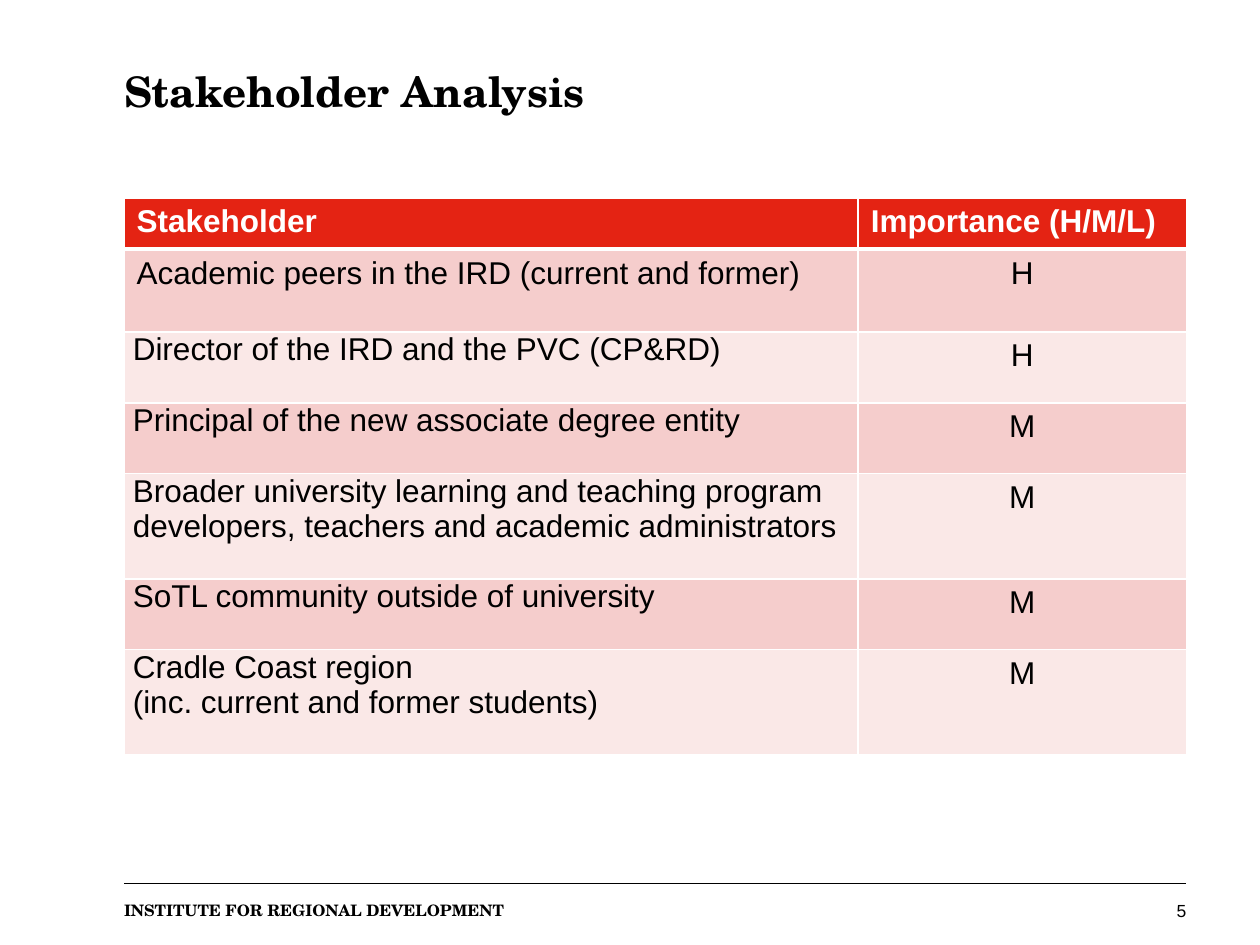
from lxml import etree
from pptx import Presentation
from pptx.dml.color import RGBColor
from pptx.enum import shapes, text
from pptx.oxml import ns
from pptx.util import Pt

COLORS = {"black": "000000", "white": "FFFFFF", "header": "E42313",
          "odd": "F5CDCC", "even": "FAE8E7"}
SERIF, SANS = "TeX Gyre Schola", "Arial"
LEFT, WIDTH = 70.9, 607

STAKEHOLDERS = [
    (["Academic peers in the IRD (current and former)"], "H", 47.4),
    (["Director of the IRD and the PVC (CP&RD)"], "H", 40.4),
    (["Principal of the new associate degree entity"], "M", 40.4),
    (["Broader university learning and teaching program developers, "
      "teachers and academic administrators"], "M", 60.3),
    (["SoTL community outside of university"], "M", 40.4),
    (["Cradle Coast region", "(inc. current and former students)"], "M", 60.3),
]


def rgb(name):
    return RGBColor.from_string(COLORS[name])


def write(frame, lines, size, font, color="black", bold=False, align=text.PP_ALIGN.LEFT):
    for index, line in enumerate(lines):
        paragraph = frame.add_paragraph() if index else frame.paragraphs[0]
        paragraph.alignment = align
        run = paragraph.add_run()
        run.text = line
        run.font.size, run.font.name, run.font.bold = Pt(size), font, bold
        run.font.color.rgb = rgb(color)


def add_label(slide, box, line, size, font, **style):
    frame = slide.shapes.add_textbox(*map(Pt, box)).text_frame
    frame.word_wrap = True
    frame.margin_left = frame.margin_right = frame.margin_top = frame.margin_bottom = 0
    write(frame, [line], size, font, **style)
    return frame


def add_title(slide, box):
    frame = add_label(slide, box, "Stakeholder Analysis", 24, SERIF, bold=True)
    frame.paragraphs[0].line_spacing = Pt(24)


def set_borders(cell, top, bottom):
    """Draw white borders; the side borders are 1 pt wide."""
    properties = cell._tc.get_or_add_tcPr()
    sides = {"lnL": 1, "lnR": 1, "lnT": top, "lnB": bottom}
    for index, (side, width) in enumerate(sides.items()):
        line = etree.Element(ns.qn(f"a:{side}"), w=str(Pt(width)))
        fill = etree.SubElement(line, ns.qn("a:solidFill"))
        etree.SubElement(fill, ns.qn("a:srgbClr"), val=COLORS["white"])
        properties.insert(index, line)


def fill_cell(cell, lines, fill, top=1, bottom=1, **style):
    cell.fill.solid()
    cell.fill.fore_color.rgb = rgb(fill)
    set_borders(cell, top, bottom)
    write(cell.text_frame, lines, 18, SANS, **style)


def add_stakeholder_table(slide, box):
    left, top, width, height = box
    table = slide.shapes.add_table(len(STAKEHOLDERS) + 1, 2, *map(Pt, box)).table
    name_width = 419.5
    table.columns[0].width = Pt(name_width)
    table.columns[1].width = Pt(width - name_width)

    table.rows[0].height = Pt(29.2)
    for column, heading in enumerate(("Stakeholder", "Importance (H/M/L)")):
        fill_cell(table.cell(0, column), [heading], "header", bottom=3,
                  color="white", bold=True)

    for row, (names, importance, row_height) in enumerate(STAKEHOLDERS, start=1):
        table.rows[row].height = Pt(row_height)
        fill = "odd" if row % 2 else "even"
        border = 3 if row == 1 else 1
        name_cell = table.cell(row, 0)
        fill_cell(name_cell, names, fill, top=border)
        if row > 1:
            name_cell.margin_left = name_cell.margin_right = Pt(5)
            name_cell.margin_top = name_cell.margin_bottom = 0
        fill_cell(table.cell(row, 1), [importance], fill, top=border,
                  align=text.PP_ALIGN.CENTER)


def add_footer(slide, box):
    left, top, width, height = box
    rule = slide.shapes.add_connector(shapes.MSO_CONNECTOR.STRAIGHT, Pt(left), Pt(top),
                                      Pt(left + width), Pt(top))
    rule.line.color.rgb = rgb("black")
    rule.line.width = Pt(0.5)
    etree.SubElement(rule._element.spPr, ns.qn("a:effectLst"))
    add_label(slide, (left, top + 10, 558.7, 15), "INSTITUTE FOR REGIONAL DEVELOPMENT",
              9, SERIF, bold=True)
    number_width = 28
    add_label(slide, (left + width - number_width, top + 9.4, number_width, 16), "5",
              10, SANS, align=text.PP_ALIGN.RIGHT)


def main():
    presentation = Presentation()
    presentation.slide_width, presentation.slide_height = Pt(720), Pt(540)
    slide = presentation.slides.add_slide(presentation.slide_layouts[6])
    add_title(slide, (LEFT, 42.5, WIDTH, 57))
    add_stakeholder_table(slide, (LEFT, 113.2, WIDTH, 318.4))
    add_footer(slide, (LEFT, 504.7, WIDTH, 25))
    presentation.save("out.pptx")


if __name__ == "__main__":
    main()
